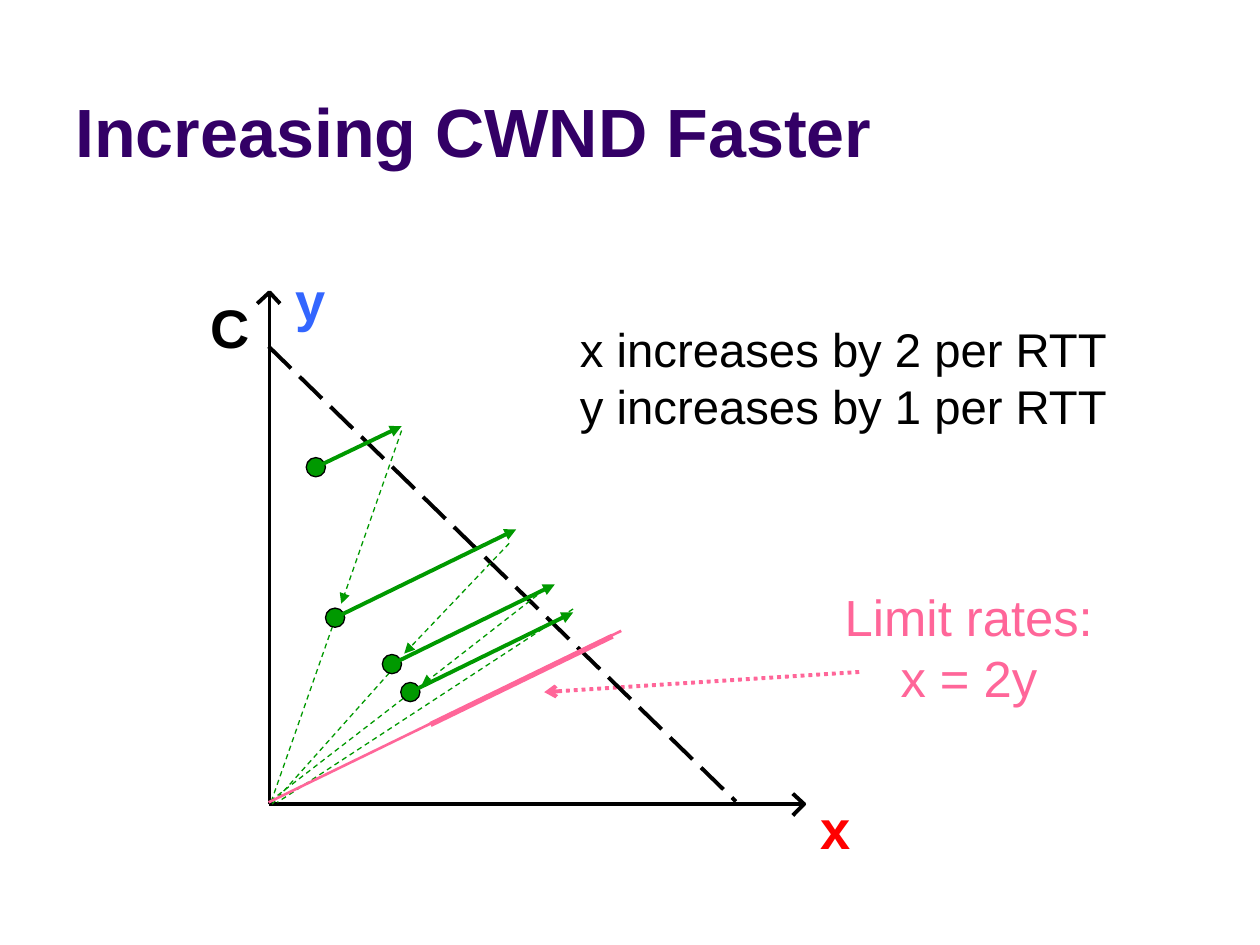
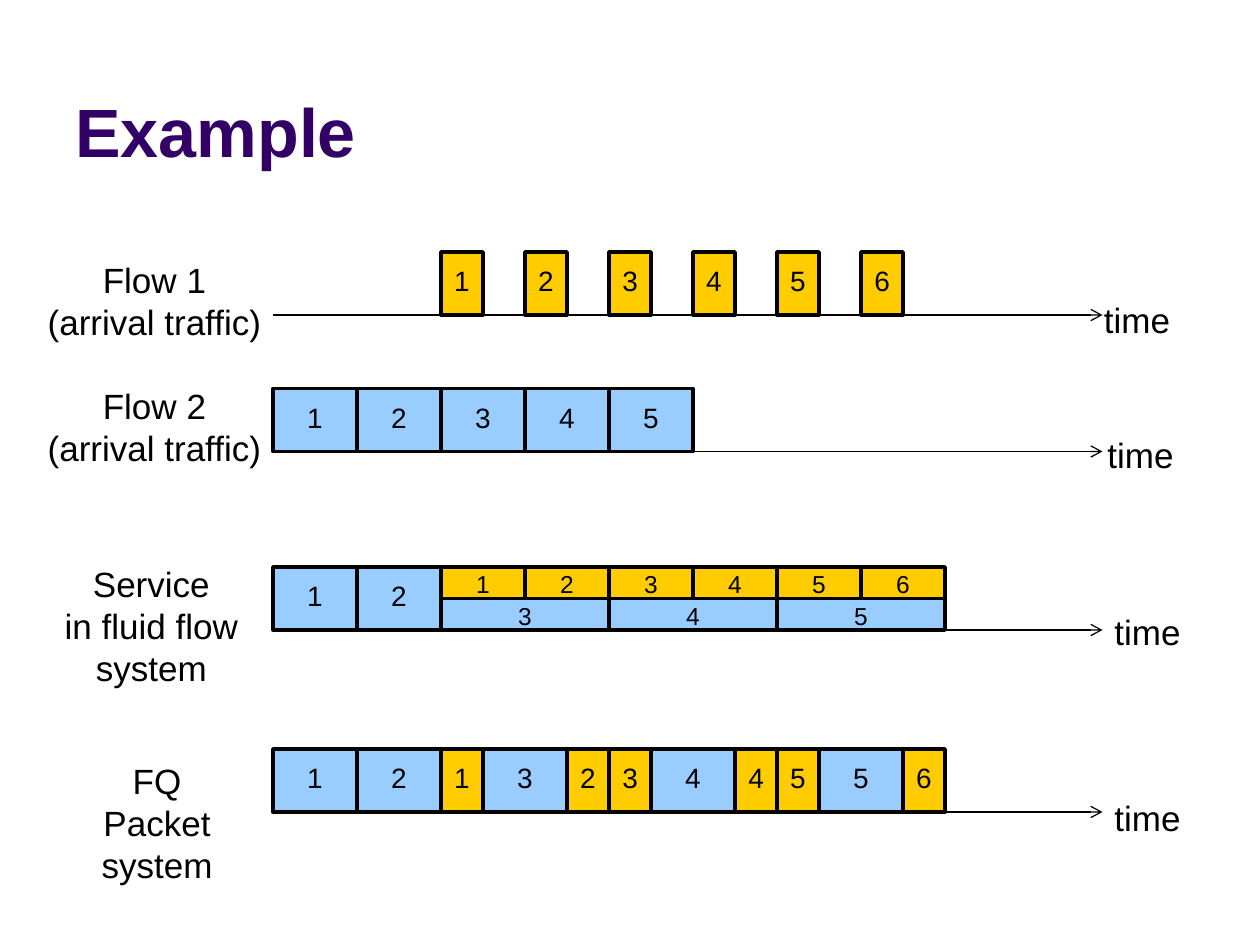
import dataclasses

import lxml.etree
import pptx
import pptx.dml.color
import pptx.enum.dml
import pptx.enum.shapes
import pptx.enum.text
import pptx.oxml.ns
import pptx.util


@dataclasses.dataclass(frozen=True)
class Theme:
    font: str = "Arial"
    title: str = "330066"
    ink: str = "000000"
    paper: str = "FFFFFF"
    green: str = "009900"
    pink: str = "FF6699"
    red: str = "FF0000"
    blue: str = "3366FF"
    gold: str = "FFCC00"
    sky: str = "99CCFF"
    head: float = 39
    axis: float = 31
    limit: float = 29
    note: float = 27
    label: float = 20
    cell: float = 16
    small: float = 14


theme = Theme()
Pt = pptx.util.Pt
rgb = pptx.dml.color.RGBColor.from_string
Dash = pptx.enum.dml.MSO_LINE
Kind = pptx.enum.shapes.MSO_SHAPE
Align = pptx.enum.text.PP_ALIGN
Anchor = pptx.enum.text.MSO_ANCHOR
Fit = pptx.enum.text.MSO_AUTO_SIZE


def write(page, text, box, size, color=theme.ink, bold=False, align=Align.CENTER,
          anchor=Anchor.TOP, pad=(7.2, 3.6, 3.6), wrap=False, grow=True, fill=None, edge=None):
    place = [Pt(v) for v in box]
    if fill:
        shape = page.shapes.add_shape(Kind.RECTANGLE, *place)
        shape.shadow.inherit = False
        shape.fill.solid()
        shape.fill.fore_color.rgb = rgb(fill)
        if edge:
            shape.line.color.rgb = rgb(theme.ink)
            shape.line.width = Pt(edge)
        else:
            shape.line.fill.background()
    else:
        shape = page.shapes.add_textbox(*place)
    frame = shape.text_frame
    frame.word_wrap = wrap
    frame.auto_size = Fit.SHAPE_TO_FIT_TEXT if grow else Fit.NONE
    frame.vertical_anchor = anchor
    frame.margin_left = frame.margin_right = Pt(pad[0])
    frame.margin_top, frame.margin_bottom = Pt(pad[1]), Pt(pad[2])
    frame.text = text
    for para in frame.paragraphs:
        para.alignment = align
        for run in para.runs:
            run.font.name = theme.font
            run.font.size = Pt(size)
            run.font.bold = bold
            run.font.color.rgb = rgb(color)


def draw(page, ends, color=theme.ink, width=0.75, dash=None, tip=None):
    line = page.shapes.add_connector(
        pptx.enum.shapes.MSO_CONNECTOR.STRAIGHT, *[Pt(v) for v in ends])
    line.line.color.rgb = rgb(color)
    line.line.width = Pt(width)
    if dash:
        line.line.dash_style = dash
    if tip:
        stroke = line.line._get_or_add_ln()
        lxml.etree.SubElement(stroke, pptx.oxml.ns.qn("a:tailEnd")).set("type", tip)
    lxml.etree.SubElement(line._element.spPr, pptx.oxml.ns.qn("a:effectLst"))


deck = pptx.Presentation()
deck.slide_width, deck.slide_height = Pt(720), Pt(540)
pages = []
for title in ("Increasing CWND Faster", "Example"):
    page = deck.slides.add_slide(deck.slide_layouts[6])
    write(page, title, (36, 9.4, 648, 92), theme.head, color=theme.title, bold=True,
          align=Align.LEFT, anchor=Anchor.BOTTOM, wrap=True, grow=False)
    pages.append(page)
graph, flows = pages

write(graph, "Limit rates:\nx = 2y", (453, 332, 201.5, 76.5), theme.limit,
      color=theme.pink, pad=(6.5, 3, 3), wrap=True, fill=theme.paper)
write(graph, "x increases by 2 per RTT\ny increases by 1 per RTT", (322, 180, 317, 72),
      theme.note, align=Align.RIGHT, pad=(6.5, 3, 3))
for name, color, box in (
    ("C", theme.ink, (120, 168, 22.5, 37.5)),
    ("x", theme.red, (468.5, 454.5, 17.5, 37.5)),
    ("y", theme.blue, (168.5, 152.5, 17.5, 37.5)),
):
    write(graph, name, box, theme.axis, color=color, bold=True, align=Align.RIGHT, pad=(0, 0, 0))

draw(graph, (491, 384, 311, 395.5), theme.pink, 2.25, Dash.ROUND_DOT, "arrow")
for ends, head in (
    ((154, 459.5, 154, 167), ((160, 173.5), (154, 167), (147, 173.5))),
    ((154, 459.5, 459.5, 459.5), ((453, 466), (459.5, 459.5), (453, 453.5))),
):
    draw(graph, ends, width=2.25)
    points = [(Pt(x), Pt(y)) for x, y in head]
    outline = graph.shapes.build_freeform(*points[0], scale=1.0)
    outline.add_line_segments(points[1:], close=False)
    mark = outline.convert_to_shape()
    mark.shadow.inherit = False
    mark.fill.background()
    mark.line.color.rgb = rgb(theme.ink)
    mark.line.width = Pt(2.25)

draw(graph, (153.5, 198, 420.5, 458), width=2.25, dash=Dash.LONG_DASH)
for ends in (
    (190, 358, 155, 458),
    (222.5, 384.5, 155.5, 459.5),
    (234.5, 396, 153.5, 458.5),
    (327.5, 348, 158.5, 458.5),
):
    draw(graph, ends, theme.green, dash=Dash.DASH)
for ends in (
    (229.5, 246, 195, 345),
    (291, 310.5, 231, 373.5),
    (311, 337, 241, 391.5),
):
    draw(graph, ends, theme.green, dash=Dash.DASH, tip="triangle")

for x, y, right, top in (
    (180.5, 267, 229.5, 243.5),
    (191.5, 353, 295, 302.5),
    (224, 379.5, 317, 334),
    (234.5, 395.5, 327.5, 350),
):
    dot = graph.shapes.add_shape(Kind.OVAL, Pt(x - 5.5), Pt(y - 5.5), Pt(11), Pt(11))
    dot.shadow.inherit = False
    dot.fill.solid()
    dot.fill.fore_color.rgb = rgb(theme.green)
    dot.line.color.rgb = rgb(theme.ink)
    dot.line.width = Pt(0.75)
    draw(graph, (x, y, right, top), theme.green, 2.25, tip="triangle")
draw(graph, (153.5, 458.5, 355, 360.5), theme.pink, 1.5)
draw(graph, (246, 414, 350, 363.5), theme.pink, 3)

left, unit, tall = 156, 24, 36
half = tall / 2
tops = (144, 222, 324, 428)
names = (
    ("Flow 1\n(arrival traffic)", (19.5, 144, 137.5, 55.5)),
    ("Flow 2\n(arrival traffic)", (19.5, 216, 137.5, 55.5)),
    ("Service\nin fluid flow\nsystem", (29, 318, 115, 80)),
    ("FQ\nPacket\nsystem", (50.5, 430.5, 78.5, 80)),
)
times = ((623.5, 167), (625.5, 244), (629.5, 345.5), (629.5, 451.5))
for top, (name, box), (x, y) in zip(tops, names, times):
    draw(flows, (left, top + tall, 630, top + tall), tip="arrow")
    write(flows, name, box, theme.label)
    write(flows, "time", (x, y, 52.5, 31), theme.label)

first, second, fluid, fair = tops
cells = [(i + 1, 4 + 2 * i, 1, first, tall, theme.gold) for i in range(6)]
cells += [(i + 1, 2 * i, 2, second, tall, theme.sky) for i in range(5)]
cells += [(i + 1, 2 * i, 2, fluid, tall, theme.sky) for i in range(2)]
cells += [(i + 1, 4 + 2 * i, 2, fluid, half, theme.gold) for i in range(6)]
cells += [(i + 3, 4 + 4 * i, 4, fluid + half, half, theme.sky) for i in range(3)]
start = 0
for color, count in zip("bbgbggbggbg", (1, 2, 1, 3, 2, 3, 4, 4, 5, 5, 6)):
    span, fill = (2, theme.sky) if color == "b" else (1, theme.gold)
    cells.append((count, start, span, fair, tall, fill))
    start += span

for count, start, span, top, high, fill in cells:
    full = high == tall
    write(flows, str(count), (left + start * unit, top, span * unit, high),
          theme.cell if full else theme.small, anchor=Anchor.MIDDLE,
          pad=(0, 0, 3.6) if full else (0, 1.4, 0), grow=False, fill=fill, edge=2)

deck.save("out.pptx")
